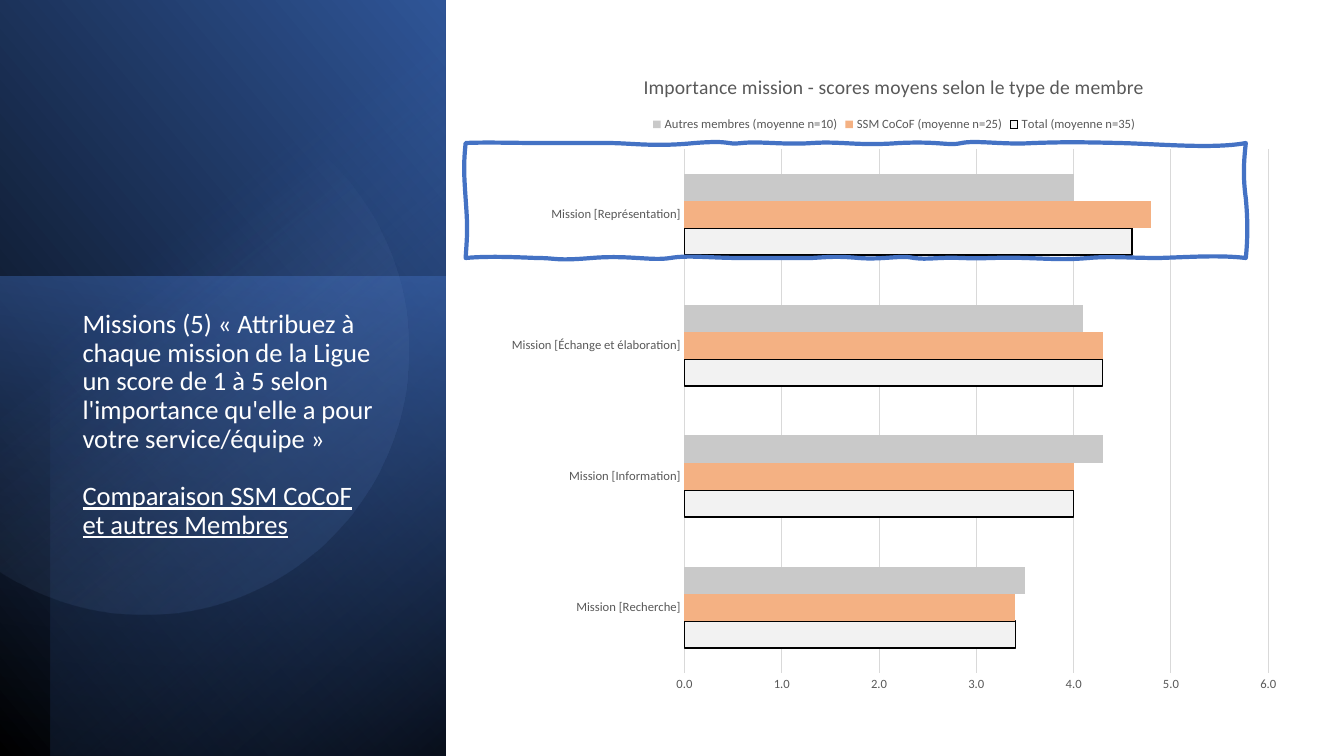
import math

from pptx import Presentation
from pptx import util as u
from pptx.chart.data import CategoryChartData
from pptx.dml.color import RGBColor
from pptx.enum import chart as ch, shapes, text
from lxml import etree

Pt = u.Pt
BLACK = RGBColor(0x00, 0x00, 0x00)
WHITE = RGBColor(0xFF, 0xFF, 0xFF)
BLUE = RGBColor(0x44, 0x72, 0xC4)
DEEP_BLUE = RGBColor(0x2F, 0x55, 0x97)
NAVY = RGBColor(0x20, 0x38, 0x64)
PALE_BLUE = RGBColor(0x8F, 0xAA, 0xDC)
GREY_TEXT = RGBColor(0x59, 0x59, 0x59)
GRID_GREY = RGBColor(0xD9, 0xD9, 0xD9)
TOTAL_GREY = RGBColor(0xF2, 0xF2, 0xF2)
ORANGE = RGBColor(0xF4, 0xB1, 0x83)
MEMBER_GREY = RGBColor(0xC9, 0xC9, 0xC9)
FONT = "Calibri"


def paint_gradient(shape, angle, stops):
    """Fill with two (position %, colour, opacity %) stops; angle is clockwise."""
    shape.line.fill.background()
    shape.fill.gradient()
    shape.fill.gradient_angle = 360 - angle
    for stop, (position, colour, opacity) in zip(shape.fill.gradient_stops, stops):
        stop.position = position / 100
        stop.color.rgb = colour
        if opacity < 100:
            rgb = stop._gs[0]
            etree.SubElement(rgb, rgb.tag.replace("srgbClr", "alpha"), val=str(opacity * 1000))


def draw_curves(points):
    """Closed outline: a start, then two handles and an end for each curve."""
    corners = [(Pt(x), Pt(y)) for x, y in points]
    builder = slide.shapes.build_freeform(*corners[0], scale=1.0)
    builder.add_line_segments(corners[1:], close=True)
    outline = builder.convert_to_shape()
    outline.shadow.inherit = False
    segments = outline._element.xpath(".//a:lnTo")[:len(points) - 1]
    for curve, handle, end in zip(segments[::3], segments[1::3], segments[2::3]):
        curve.tag = curve.tag.replace("lnTo", "cubicBezTo")
        for segment in (handle, end):
            curve.append(segment[0])
            segment.getparent().remove(segment)
    return outline


prs = Presentation()
prs.slide_width, prs.slide_height = Pt(960), Pt(540)
slide = prs.slides.add_slide(prs.slide_layouts[6])

# Layered blue panel: left, top, width, height, rotation, mirrored, angle, stops
panel_layers = [
    (-111.6, 111.6, 541.44, 318.24, 90, True, 310, [(0, BLACK, 100), (100, DEEP_BLUE, 100)]),
    (-12.24, 209.52, 342.72, 318.24, 270, False, 190, [(0, BLUE, 50), (100, NAVY, 0)]),
    (-92.88, 128.88, 540, 282.24, 270, True, 220, [(0, BLACK, 59), (69, BLUE, 0)]),
]
for left, top, width, height, rotation, mirrored, angle, stops in panel_layers:
    layer = slide.shapes.add_shape(shapes.MSO_SHAPE.RECTANGLE, Pt(left), Pt(top), Pt(width), Pt(height))
    layer.shadow.inherit = False
    layer.rotation = rotation
    if mirrored:
        layer._element.spPr.xfrm.set("flipH", "1")
    paint_gradient(layer, angle, stops)

# Translucent disc cut by the left edge of the slide
disc_x, disc_y, radius = 103, 249.8, 189
reach = math.acos(-disc_x / radius)
arc = reach / 2
handle_length = 4 / 3 * math.tan(arc / 4)
disc_points = [(0, disc_y - radius * math.sin(reach))]
for index in range(4):
    start = index * arc - reach
    end = start + arc
    for a, pull in ((start, handle_length), (end, -handle_length), (end, 0)):
        disc_points.append((disc_x + radius * (math.cos(a) - pull * math.sin(a)),
                            disc_y + radius * (math.sin(a) + pull * math.cos(a))))
paint_gradient(draw_curves(disc_points), 51.6, [(39, PALE_BLUE, 0), (100, DEEP_BLUE, 26)])

# Question
question = slide.shapes.add_textbox(Pt(51.84), Pt(218.16), Pt(226.8), Pt(241.92)).text_frame
question.word_wrap = True
question.margin_right = Pt(11)
question.vertical_anchor = text.MSO_ANCHOR.TOP
wording = [
    ("Missions (5) « Attribuez à chaque mission de la Ligue un score de 1 à 5 selon "
     "l'importance qu'elle a pour votre service/équipe »", False, 0),
    ("Comparaison SSM CoCoF et autres Membres", True, 20.5),
]
for index, (words, underlined, gap) in enumerate(wording):
    paragraph = question.add_paragraph() if index else question.paragraphs[0]
    paragraph.line_spacing = 0.9
    paragraph.space_before = Pt(gap)
    run = paragraph.add_run()
    run.text = words
    run.font.name, run.font.size = FONT, Pt(19)
    run.font.color.rgb = WHITE
    run.font.underline = underlined

# Chart of mean scores
scores = CategoryChartData(number_format="0.0")
scores.categories = ["Mission [Recherche]", "Mission [Information]",
                     "Mission [Échange et élaboration]", "Mission [Représentation]"]
groups = [
    ("Total (moyenne n=35)", (3.4, 4.0, 4.3, 4.6), TOTAL_GREY),
    ("SSM CoCoF (moyenne n=25)", (3.4, 4.0, 4.3, 4.8), ORANGE),
    ("Autres membres (moyenne n=10)", (3.5, 4.3, 4.1, 4.0), MEMBER_GREY),
]
for name, means, _ in groups:
    scores.add_series(name, means)
chart = slide.shapes.add_chart(ch.XL_CHART_TYPE.BAR_CLUSTERED, Pt(354.24), Pt(36.72),
                               Pt(568.8), Pt(466.56), scores).chart
chart.font.name, chart.font.size = FONT, Pt(10)

title = chart.chart_title.text_frame.paragraphs[0].add_run()
title.text = "Importance mission - scores moyens selon le type de membre"
title.font.name, title.font.size, title.font.bold = FONT, Pt(14), False
title.font.color.rgb = GREY_TEXT

chart.has_legend = True
chart.legend.position = ch.XL_LEGEND_POSITION.TOP
chart.legend.include_in_layout = False
missions, scale = chart.category_axis, chart.value_axis
for part_font in (chart.legend.font, missions.tick_labels.font, scale.tick_labels.font):
    part_font.name, part_font.size = FONT, Pt(9)
    part_font.color.rgb = GREY_TEXT

for axis in (missions, scale):
    axis.major_tick_mark = axis.minor_tick_mark = ch.XL_TICK_MARK.NONE
scale.minimum_scale, scale.maximum_scale, scale.major_unit = 0, 6, 1
scale.tick_labels.number_format = "0.0"
scale.tick_labels.number_format_is_linked = False
scale.format.line.fill.background()
for rule in (missions.format.line, scale.major_gridlines.format.line):
    rule.color.rgb = GRID_GREY
    rule.width = Pt(0.75)

bars = chart.plots[0]
bars.gap_width, bars.overlap, bars.vary_by_categories = 182, 0, False
for series, (_, _, colour) in zip(bars.series, groups):
    series.format.fill.solid()
    series.format.fill.fore_color.rgb = colour
total_border = bars.series[0].format.line
total_border.color.rgb = BLACK
total_border.width = Pt(1)

# Hand-drawn frame around the first mission
# Each curve: place and offset of two handles, then place of its end along the side
frame_left, frame_top, frame_right, frame_bottom = 332.6, 102.2, 889.9, 184.3
top_side = [
    (344.9, -0.7, 372.2, 0, 383), (394.6, 0, 417.6, 0, 434.2), (450.7, 0, 467.3, 2.9, 496.1),
    (524.2, -2.2, 517, 1.4, 529.9), (542.9, -1.4, 560.2, 1.4, 580.3),
    (600.5, -1.4, 612.7, 2.2, 642.2), (671.8, -1.4, 677.5, 2.2, 686.9),
    (697, -2.2, 717.1, 1.4, 738), (758.9, -0.7, 770.4, -0.7, 799.9),
    (828.7, 0.7, 866.9, 4.3, frame_right),
]
right_side = [(114.5, -1.4, 126, -2.2, 141.8), (157, 1.4, 169.9, 1.4, frame_bottom)]
bottom_side = [
    (871.2, -2.2, 850.3, -0.7, 828), (805.7, 0, 794.2, -1.4, 777.6), (761, 1.4, 753.8, 0.7, 732.2),
    (710.6, -0.7, 705.6, 0.7, 686.9), (668.9, -0.7, 663.1, 1.4, 653),
    (643.7, -2.2, 630, 1.4, 613.4), (597.6, -1.4, 591.8, -0.7, 579.6),
    (568.1, 0, 551.5, 0, 529.2), (506.9, 0, 491.8, -2.2, 478.8),
    (465.1, 2.2, 449.3, -2.2, 422.6), (395.3, 2.2, 398.9, 0, 383),
    (366.5, -0.7, 347.8, -1.4, frame_left),
]
left_side = [(164.9, 1.4, 161.3, 1.4, 141.8), (121.7, -1.4, 116.6, -1.4, frame_top)]
sides = [(top_side, frame_top, True), (right_side, frame_right, False),
         (bottom_side, frame_bottom, True), (left_side, frame_left, False)]
frame_points = [(frame_left, frame_top)]
for curves, base, horizontal in sides:
    for handle1, offset1, handle2, offset2, end in curves:
        for along, offset in ((handle1, offset1), (handle2, offset2), (end, 0)):
            across = base + offset
            frame_points.append((along, across) if horizontal else (across, along))
frame = draw_curves(frame_points)
frame.fill.background()
frame.line.color.rgb = BLUE
frame.line.width = Pt(3)

prs.save("out.pptx")
